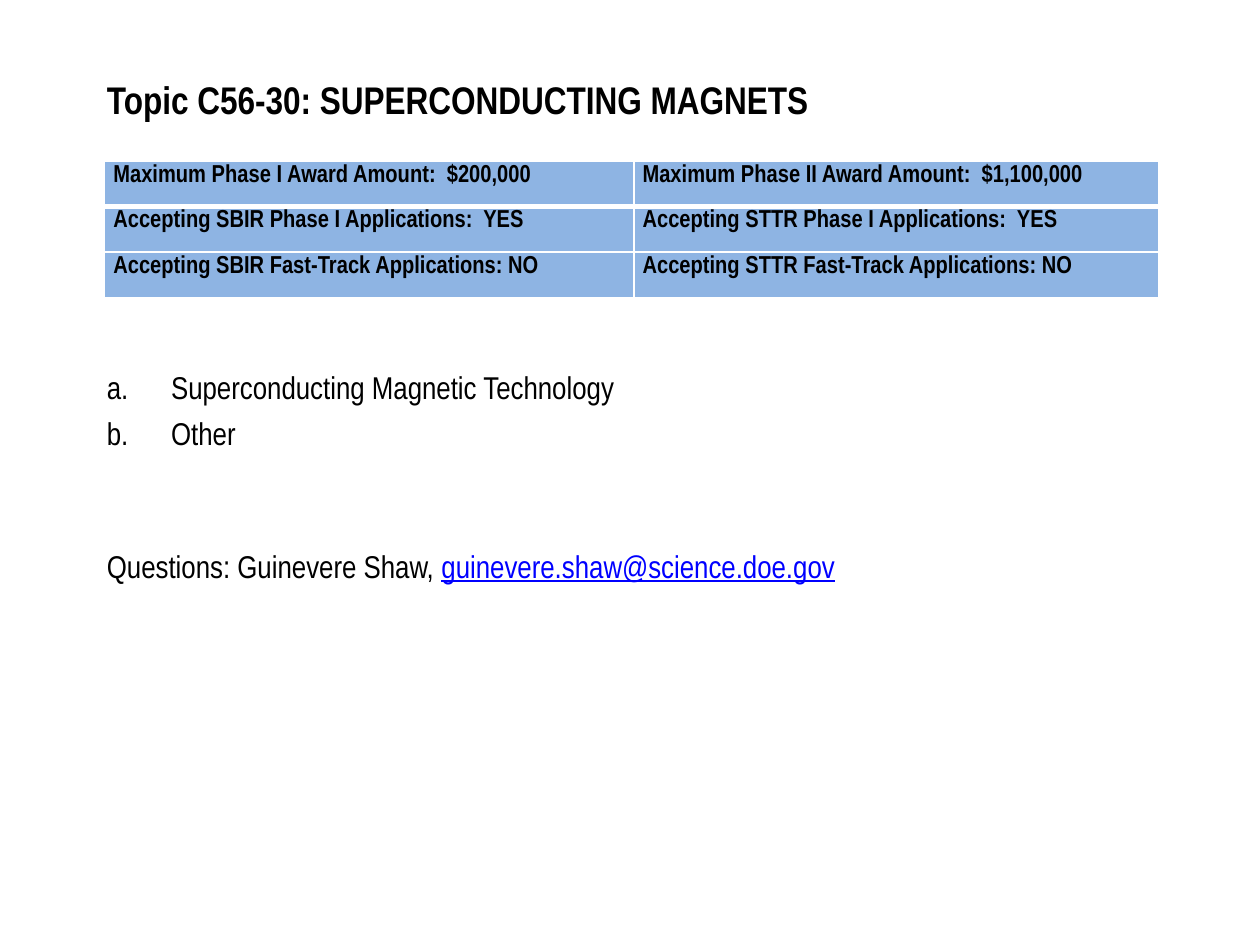
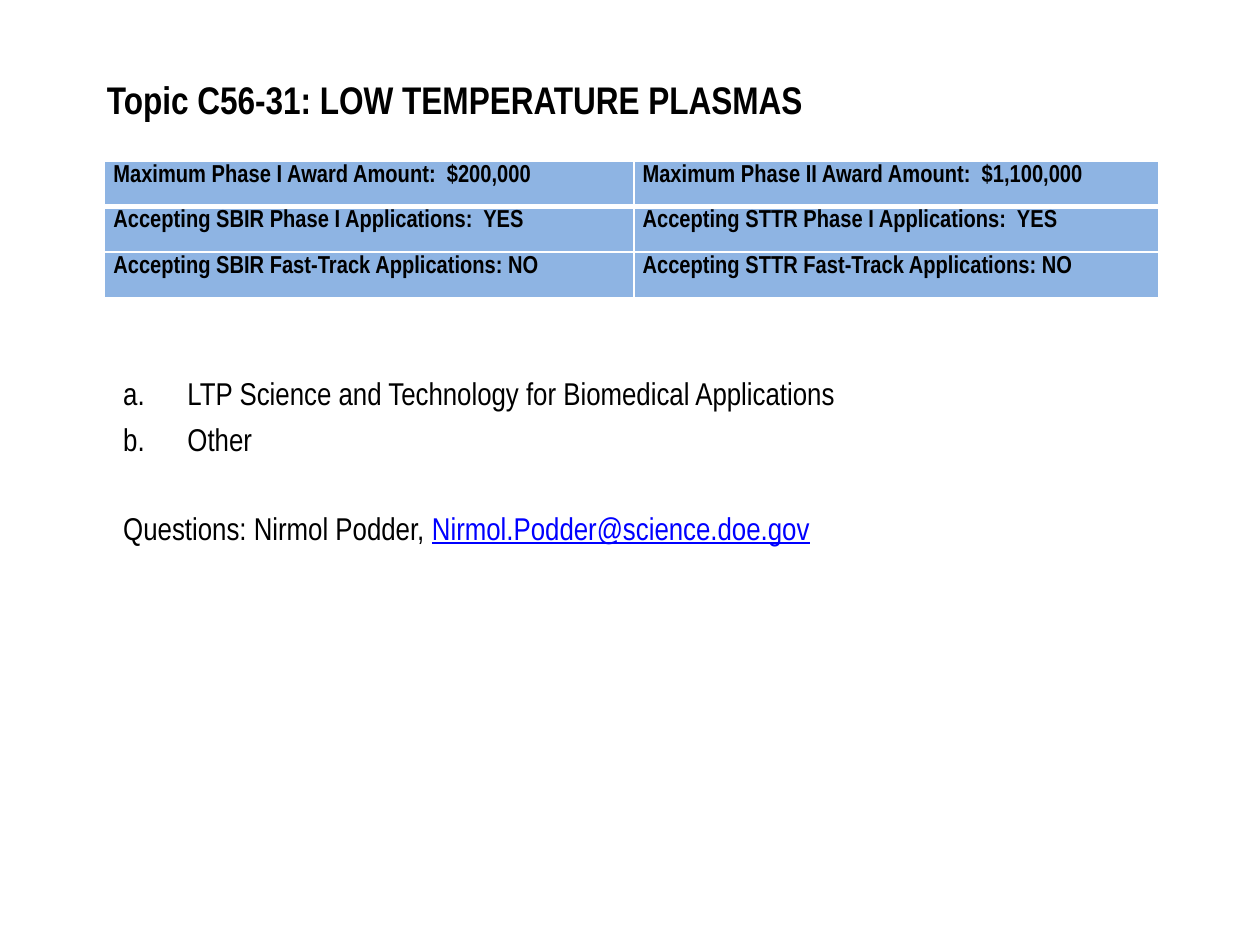
from lxml import etree
from pptx import Presentation
from pptx.dml.color import RGBColor
from pptx.enum.text import MSO_ANCHOR
from pptx.oxml.ns import qn
from pptx.util import Inches, Pt

# Content
AWARD_TERMS = [
    ("Maximum Phase I Award Amount:  $200,000",
     "Maximum Phase II Award Amount:  $1,100,000"),
    ("Accepting SBIR Phase I Applications:  YES",
     "Accepting STTR Phase I Applications:  YES"),
    ("Accepting SBIR Fast-Track Applications: NO",
     "Accepting STTR Fast-Track Applications: NO"),
]
TOPICS = [
    {"title": "Topic C56-30: SUPERCONDUCTING MAGNETS",
     "subtopics": ["Superconducting Magnetic Technology", "Other"],
     "contact": ("Questions: Guinevere Shaw, ", "guinevere.shaw@science.doe.gov"),
     "body_at": (0.75, 2.87), "gap_lines": 2},
    {"title": "Topic C56-31: LOW TEMPERATURE PLASMAS",
     "subtopics": ["LTP Science and Technology for Biomedical Applications", "Other"],
     "contact": ("Questions: Nirmol Podder, ", "Nirmol.Podder@science.doe.gov"),
     "body_at": (0.88, 2.92), "gap_lines": 1},
]

# Shared style
COLORS = {"text": "000000", "email": "0000FF", "cell": "8EB4E3", "border": "FFFFFF"}
FONT = "Arial Narrow"
COL_WIDTHS = (4.2, 4.17)
ROW_HEIGHT = 0.36
BODY_SIZE = (8.67, 2.75)
LIST_INDENT = 0.51
SPACE_BEFORE = 4.5   # points above each body line
LINE_PITCH = 25.1    # points from one body line to the next


def style_run(r, size, color="text", bold=False, underline=False):
    r.font.name = FONT
    r.font.size = Pt(size)
    r.font.bold = bold
    r.font.underline = underline
    r.font.color.rgb = RGBColor.from_string(COLORS[color])


def add_text_frame(s, left, top, width, height):
    box = s.shapes.add_textbox(Inches(left), Inches(top), Inches(width), Inches(height))
    tf = box.text_frame
    tf.word_wrap = True
    return tf


def set_borders(cell, **widths):
    """Add cell lines, in points, ahead of the fill as the schema requires."""
    tc_pr = cell._tc.get_or_add_tcPr()
    for i, side in enumerate(("L", "R", "T", "B")):
        ln = etree.Element(qn(f"a:ln{side}"), w=str(Pt(widths.get(side, 1))))
        fill = etree.SubElement(ln, qn("a:solidFill"))
        etree.SubElement(fill, qn("a:srgbClr"), val=COLORS["border"])
        tc_pr.insert(i, ln)


def set_lettered(p):
    p_pr = p._p.get_or_add_pPr()
    p_pr.set("marL", str(Inches(LIST_INDENT)))
    p_pr.set("indent", str(-Inches(LIST_INDENT)))
    etree.SubElement(p_pr, qn("a:buFont"), typeface=FONT)
    etree.SubElement(p_pr, qn("a:buAutoNum"), type="alphaLcPeriod")


def add_title(s, title):
    tf = add_text_frame(s, 0.75, 0.33, 8.92, 0.92)
    tf.vertical_anchor = MSO_ANCHOR.MIDDLE
    tf.text = title
    style_run(tf.paragraphs[0].runs[0], 22, bold=True)


def add_award_table(s):
    rows = len(AWARD_TERMS)
    frame = s.shapes.add_table(rows, len(COL_WIDTHS), Inches(0.83), Inches(1.28),
                               Inches(sum(COL_WIDTHS)), Inches(rows * ROW_HEIGHT))
    table = frame.table
    for col, width in zip(table.columns, COL_WIDTHS):
        col.width = Inches(width)
    for i, terms in enumerate(AWARD_TERMS):
        table.rows[i].height = Inches(ROW_HEIGHT)
        for j, term in enumerate(terms):
            cell = table.cell(i, j)
            cell.margin_left = cell.margin_right = Inches(0.07)
            cell.margin_top = cell.margin_bottom = 0
            cell.fill.solid()
            cell.fill.fore_color.rgb = RGBColor.from_string(COLORS["cell"])
            # A heavier line separates the award amounts from the rest
            set_borders(cell, T=3 if i == 1 else 1, B=3 if i == 0 else 1)
            cell.text_frame.text = term
            p = cell.text_frame.paragraphs[0]
            p.line_spacing = 1.15
            style_run(p.runs[0], 14, bold=True)


def add_body(s, topic):
    tf = add_text_frame(s, *topic["body_at"], *BODY_SIZE)
    # Lettered subtopics
    tf.text = "\n".join(topic["subtopics"])
    for p in tf.paragraphs:
        p.space_before = Pt(SPACE_BEFORE)
        set_lettered(p)
        style_run(p.runs[0], 18)
    # Contact line
    p = tf.add_paragraph()
    p.space_before = Pt(SPACE_BEFORE + topic["gap_lines"] * LINE_PITCH)
    question, email = topic["contact"]
    p.text = question
    style_run(p.runs[0], 18)
    r = p.add_run()
    r.text = email
    style_run(r, 18, "email", underline=True)


def main():
    prs = Presentation()
    prs.slide_width, prs.slide_height = Inches(10), Inches(7.5)
    for topic in TOPICS:
        s = prs.slides.add_slide(prs.slide_layouts[6])
        add_title(s, topic["title"])
        add_body(s, topic)
        add_award_table(s)
    prs.save("out.pptx")


if __name__ == "__main__":
    main()
